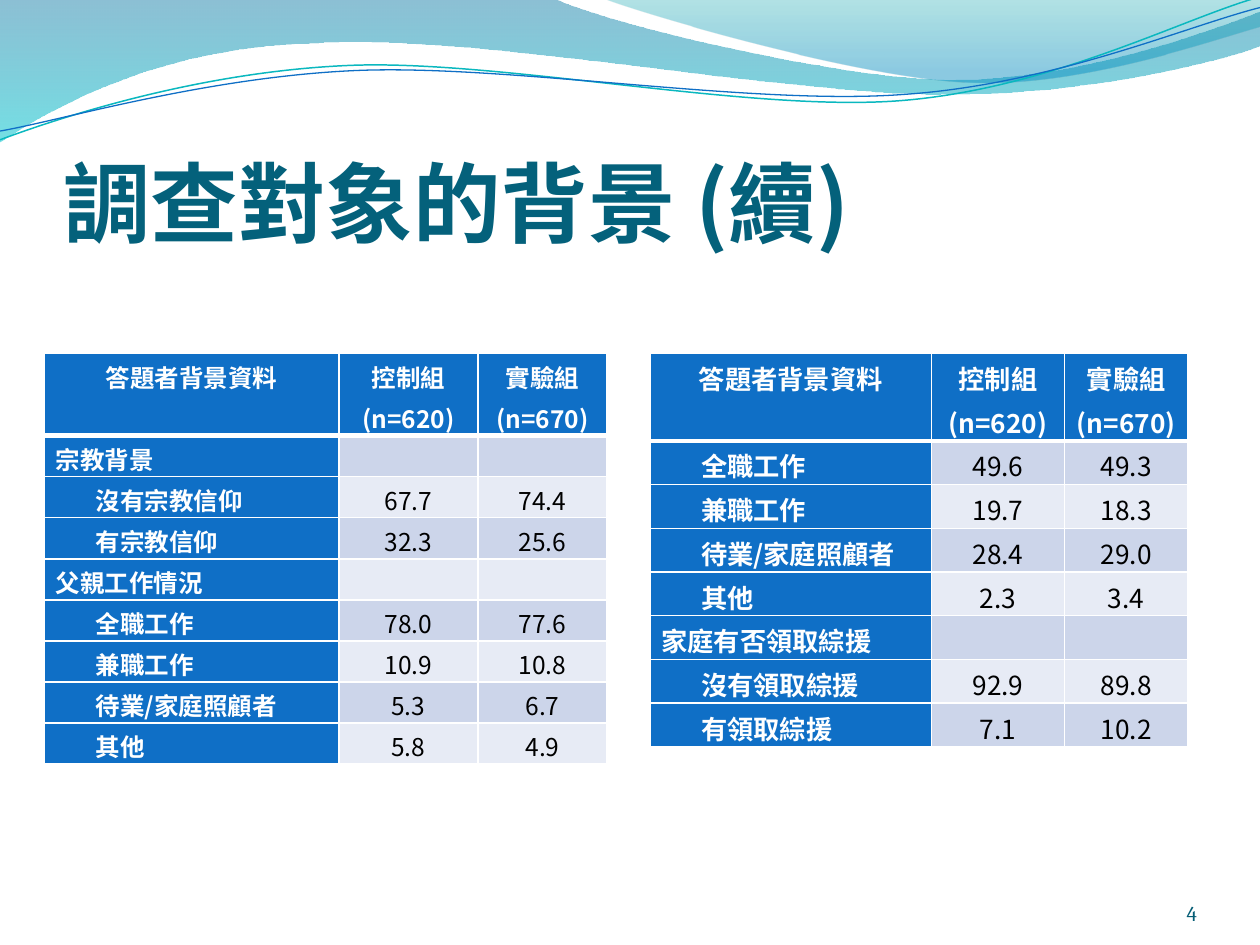
from dataclasses import dataclass
from math import cos, radians, sin

from pptx import Presentation
from pptx.dml.color import RGBColor
from pptx.enum.text import MSO_ANCHOR, MSO_AUTO_SIZE, PP_ALIGN
from pptx.oxml.ns import qn
from pptx.oxml.xmlchemy import OxmlElement
from pptx.util import Pt

COLORS = {
    "title": "04617B",
    "number": "045D75",
    "blue": "0F6FC6",
    "teal": "0AB8BF",
    "white": "FFFFFF",
    "black": "000000",
    "band_dark": "CCD5EA",
    "band_light": "E7EBF5",
    "wave_top": "0074A1",
    "wave_bottom": "00C6CF",
    "crest_top": "00A1A9",
    "crest_bottom": "008BBF",
}
CJK = "Noto Sans CJK SC"
HEADER = ("答題者背景資料", "控制組\n(n=620)", "實驗組\n(n=670)")


@dataclass
class Stop:
    position: float
    color: str
    alpha: int


@dataclass
class Curve:
    frame: tuple
    start: tuple
    segments: list
    stops: tuple = ()
    color: str = ""
    width: float = 0
    rotation: float = 0


@dataclass
class Row:
    label: str
    control: str = ""
    trial: str = ""


@dataclass
class Grid:
    left: float
    widths: tuple
    row_height: float
    size: float
    rows: list


CURVES = [
    Curve((-0.7, -0.7, 721.4, 82.1), (0, 0), [
        (316.8, -0.7),
        (342.7, 12.2, 478.1, 45.4, 545.8, 45.4),
        (614.2, 45.4, 689.8, 18.7, 720, 6.5),
        (720.7, 25.9),
        (707.8, 31.7, 626.4, 54.7, 537.1, 54),
        (446.4, 54, 275, 20.2, 185, 24.5),
        (92.9, 25.9, 33.1, 59.8, -0.7, 81.4),
        (0, 0),
    ], stops=(Stop(0, "wave_top", 45), Stop(1, "wave_bottom", 55))),
    Curve((344.9, -0.7, 375.1, 50.4), (344.9, -0.7), [
        (366.5, 7.9, 491, 44.6, 553.7, 46.8),
        (616.3, 49.7, 691.9, 23, 720, 15.1),
        (720, 0),
        (344.9, -0.7),
    ], stops=(Stop(0, "crest_top", 30), Stop(0.8, "crest_bottom", 45))),
    Curve((-1.4, 15.8, 721.4, 51.1), (0, 79.9), [
        (34.6, 67, 113.8, 41, 199.4, 37.4),
        (284.4, 33.8, 427, 64.1, 513.4, 57.6),
        (599.8, 51.1, 675.4, 10.8, 718.6, -1.4),
    ], color="teal", width=0.85, rotation=357.3),
    Curve((-1.4, 21.6, 722.2, 41.8), (0, 74.9), [
        (33.8, 69.1, 118.1, 43.9, 203.8, 40.3),
        (290.2, 36.7, 429.8, 60.5, 516.2, 54),
        (601.9, 48.2, 677.5, 15.1, 720, 4.3),
    ], color="blue", width=0.75, rotation=357.3),
]

GRIDS = [
    Grid(25.4, (168.3, 79.4, 73.8), 20.4, 14, [
        Row("宗教背景"),
        Row("沒有宗教信仰", "67.7", "74.4"),
        Row("有宗教信仰", "32.3", "25.6"),
        Row("父親工作情況"),
        Row("全職工作", "78.0", "77.6"),
        Row("兼職工作", "10.9", "10.8"),
        Row("待業/家庭照顧者", "5.3", "6.7"),
        Row("其他", "5.8", "4.9"),
    ]),
    Grid(371.4, (161, 75.8, 70.7), 20.2, 15, [
        Row("全職工作", "49.6", "49.3"),
        Row("兼職工作", "19.7", "18.3"),
        Row("待業/家庭照顧者", "28.4", "29.0"),
        Row("其他", "2.3", "3.4"),
        Row("家庭有否領取綜援"),
        Row("沒有領取綜援", "92.9", "89.8"),
        Row("有領取綜援", "7.1", "10.2"),
    ]),
]


def rgb(name: str) -> RGBColor:
    return RGBColor.from_string(COLORS[name])


def add_child(parent, tag: str, **attrs):
    child = OxmlElement(tag)
    for name, value in attrs.items():
        child.set(name, str(value))
    parent.append(child)
    return child


def write(tf, text: str, *, size: float, color: str, font: str = CJK,
          bold: bool = False, align=PP_ALIGN.LEFT, spacing=None, indent: float = 0) -> None:
    for i, line in enumerate(text.split("\n")):
        p = tf.add_paragraph() if i else tf.paragraphs[0]
        p.alignment = align
        p.line_spacing = spacing
        if indent:
            p._p.get_or_add_pPr().set("marL", str(Pt(indent)))
        r = p.add_run()
        r.text = line
        r.font.size, r.font.bold, r.font.name = Pt(size), bold, font
        r.font.color.rgb = rgb(color)
        add_child(r._r.rPr, "a:ea", typeface=font)


def set_frame(tf, *, top: float = 0) -> None:
    tf.margin_left = tf.margin_right = tf.margin_bottom = 0
    tf.margin_top = Pt(top)
    tf.vertical_anchor = MSO_ANCHOR.BOTTOM
    tf.auto_size = MSO_AUTO_SIZE.NONE
    tf.word_wrap = True


def add_points(parent, tag: str, coords: tuple, curve: Curve) -> None:
    left, top, width, height = curve.frame
    angle = radians(-curve.rotation)
    step = add_child(parent, tag)
    for x, y in zip(coords[::2], coords[1::2]):
        dx, dy = x - left - width / 2, y - top - height / 2
        add_child(step, "a:pt", x=Pt(width / 2 + dx * cos(angle) - dy * sin(angle)),
                  y=Pt(height / 2 + dx * sin(angle) + dy * cos(angle)))


def draw_curve(s, curve: Curve) -> None:
    left, top, width, height = (Pt(v) for v in curve.frame)
    builder = s.shapes.build_freeform(left, top)
    builder.add_line_segments([(left + width, top + height)], close=False)
    sp = builder.convert_to_shape()
    sp.rotation = curve.rotation
    outline = next(sp._element.iter(qn("a:path")))
    for child in list(outline):
        outline.remove(child)
    add_points(outline, "a:moveTo", curve.start, curve)
    for seg in curve.segments:
        add_points(outline, "a:lnTo" if len(seg) == 2 else "a:cubicBezTo", seg, curve)
    sp.shadow.inherit = False
    if not curve.stops:
        sp.fill.background()
        sp.line.color.rgb = rgb(curve.color)
        sp.line.width = Pt(curve.width)
        return
    add_child(outline, "a:close")
    sp.line.fill.background()
    sp.fill.gradient()
    sp.fill.gradient_angle = 270
    for gs, stop in zip(sp.fill.gradient_stops, curve.stops):
        gs.position = stop.position
        gs.color.rgb = rgb(stop.color)
    for clr, stop in zip(sp._element.spPr.iter(qn("a:srgbClr")), curve.stops):
        add_child(clr, "a:alpha", val=stop.alpha * 1000)


def set_borders(cell, widths: dict) -> None:
    tcPr = cell._tc.get_or_add_tcPr()
    for i, (side, width) in enumerate(widths.items()):
        ln = OxmlElement(f"a:ln{side}")
        ln.set("w", str(Pt(width)))
        add_child(add_child(ln, "a:solidFill"), "a:srgbClr", val=COLORS["white"])
        tcPr.insert(i, ln)


def draw_grid(s, grid: Grid) -> None:
    count = len(grid.rows) + 1
    table = s.shapes.add_table(count, 3, Pt(grid.left), Pt(202), Pt(sum(grid.widths)),
                               Pt(grid.row_height * (count + 1))).table
    for col, width in zip(table.columns, grid.widths):
        col.width = Pt(width)
    lines = [HEADER] + [(row.label, row.control, row.trial) for row in grid.rows]
    for i, texts in enumerate(lines):
        table.rows[i].height = Pt(grid.row_height * (1 if i else 2))
        for j, text in enumerate(texts):
            cell = table.cell(i, j)
            cell.margin_left = cell.margin_right = Pt(6.5)
            cell.margin_top = cell.margin_bottom = 0
            strong = i == 0 or j == 0
            cell.fill.solid()
            cell.fill.fore_color.rgb = rgb("blue" if strong else "band_dark" if i % 2 else "band_light")
            set_borders(cell, {"L": 1, "R": 1, "T": 3 if i == 1 else 1, "B": 1 if i else 3})
            if text:
                label = i > 0 and j == 0
                write(cell.text_frame, text, size=grid.size, bold=strong, spacing=1.15,
                      color="white" if strong else "black",
                      align=PP_ALIGN.LEFT if label else PP_ALIGN.CENTER,
                      indent=22.7 if label and texts[1] else 0)


def main() -> None:
    prs = Presentation()
    prs.slide_width, prs.slide_height = Pt(720), Pt(540)
    s = prs.slides.add_slide(prs.slide_layouts[5])
    for curve in CURVES:
        draw_curve(s, curve)
    title = s.shapes.title
    title.left, title.top, title.width, title.height = Pt(36), Pt(55.4), Pt(648), Pt(90)
    set_frame(title.text_frame, top=3.6)
    write(title.text_frame, "調查對象的背景 (續)", size=50, color="title", bold=True)
    s.shapes._spTree.append(title._element)
    for grid in GRIDS:
        draw_grid(s, grid)
    number = s.shapes.add_textbox(Pt(624), Pt(500.4), Pt(60), Pt(28.8))
    set_frame(number.text_frame)
    write(number.text_frame, "4", size=12, color="number", font="Cambria", align=PP_ALIGN.RIGHT)
    prs.save("out.pptx")


if __name__ == "__main__":
    main()
